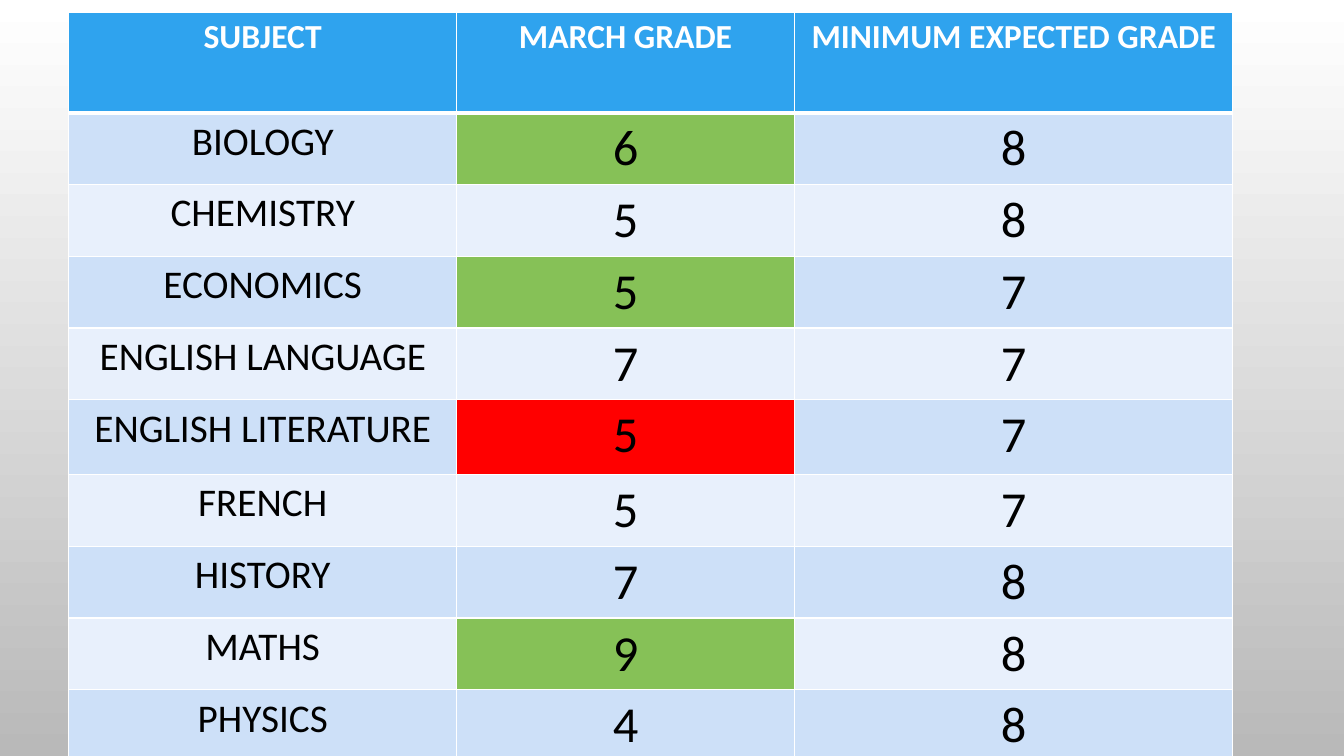
from dataclasses import dataclass

from lxml.etree import SubElement
from pptx import Presentation
from pptx.dml.color import RGBColor as Rgb
from pptx.enum.text import PP_ALIGN as Align
from pptx.oxml.ns import qn
from pptx.util import Cm, Pt


@dataclass(frozen=True)
class Theme:
    font: str = "Calibri"
    heading_size: int = 24
    subject_size: int = 28
    grade_size: int = 36
    white: str = "FFFFFF"
    black: str = "000000"
    backdrop_end: str = "B9B9B9"
    heading: str = "2FA3EE"
    bands: tuple = ("CDE0F8", "E8F0FC")
    green: str = "86C157"
    red: str = "FF0000"


theme = Theme()


def write(cell, text, *, size, color, fill, bold=False):
    cell.fill.solid()
    cell.fill.fore_color.rgb = Rgb.from_string(fill)
    paragraph = cell.text_frame.paragraphs[0]
    paragraph.alignment = Align.CENTER
    run = paragraph.add_run()
    run.text = text
    run.font.name = theme.font
    run.font.size = Pt(size)
    run.font.bold = bold
    run.font.color.rgb = Rgb.from_string(color)


def add_borders(cell, **widths):
    properties = cell._tc.get_or_add_tcPr()
    for side, width in widths.items():
        line = SubElement(properties, qn(f"a:ln{side}"), w=str(Pt(width)))
        SubElement(SubElement(line, qn("a:solidFill")), qn("a:srgbClr"), val=theme.white)


# Content: subject, March grade, minimum expected grade, highlight
headings = ["SUBJECT", "MARCH GRADE", "MINIMUM EXPECTED GRADE"]
results = [
    ("BIOLOGY", 6, 8, theme.green),
    ("CHEMISTRY", 5, 8, None),
    ("ECONOMICS", 5, 7, theme.green),
    ("ENGLISH LANGUAGE", 7, 7, None),
    ("ENGLISH LITERATURE", 5, 7, theme.red),
    ("FRENCH", 5, 7, None),
    ("HISTORY", 7, 8, None),
    ("MATHS", 9, 8, theme.green),
    ("PHYSICS", 4, 8, None),
]
column_widths = [9.78, 8.51, 11.05]
heading_height, result_height = 2.54, 1.73
taller_rows = {"ENGLISH LANGUAGE": 1.78, "ENGLISH LITERATURE": 1.88}
row_heights = [heading_height] + [taller_rows.get(row[0], result_height) for row in results]

# Slide with a gradient from top to bottom
deck = Presentation()
deck.slide_width, deck.slide_height = Cm(33.87), Cm(19.05)
slide = deck.slides.add_slide(deck.slide_layouts[6])
backdrop = slide.background.fill
backdrop.gradient()
backdrop.gradient_angle = 270
for stop, position, color in zip(
    backdrop.gradient_stops, (0, 1), (theme.white, theme.backdrop_end)
):
    stop.position = position
    stop.color.rgb = Rgb.from_string(color)

# Grade table
grades = slide.shapes.add_table(
    len(row_heights), len(column_widths), Cm(1.73), Cm(0.3),
    Cm(sum(column_widths)), Cm(sum(row_heights)),
).table
for column, width in zip(grades.columns, column_widths):
    column.width = Cm(width)
for row, height in zip(grades.rows, row_heights):
    row.height = Cm(height)

# Borders, with a heavy rule under the headings
for index, row in enumerate(grades.rows):
    for cell in row.cells:
        add_borders(cell, L=1, R=1, T=3 if index == 1 else 1, B=3 if index == 0 else 1)

# Headings
for column, heading in enumerate(headings):
    write(grades.cell(0, column), heading, size=theme.heading_size,
          color=theme.white, fill=theme.heading, bold=True)

# Results in alternating bands
for row, (subject, march, expected, highlight) in enumerate(results, start=1):
    band = theme.bands[(row - 1) % 2]
    write(grades.cell(row, 0), subject, size=theme.subject_size, color=theme.black, fill=band)
    for column, grade, fill in ((1, march, highlight or band), (2, expected, band)):
        write(grades.cell(row, column), str(grade), size=theme.grade_size,
              color=theme.black, fill=fill)

deck.save("out.pptx")
